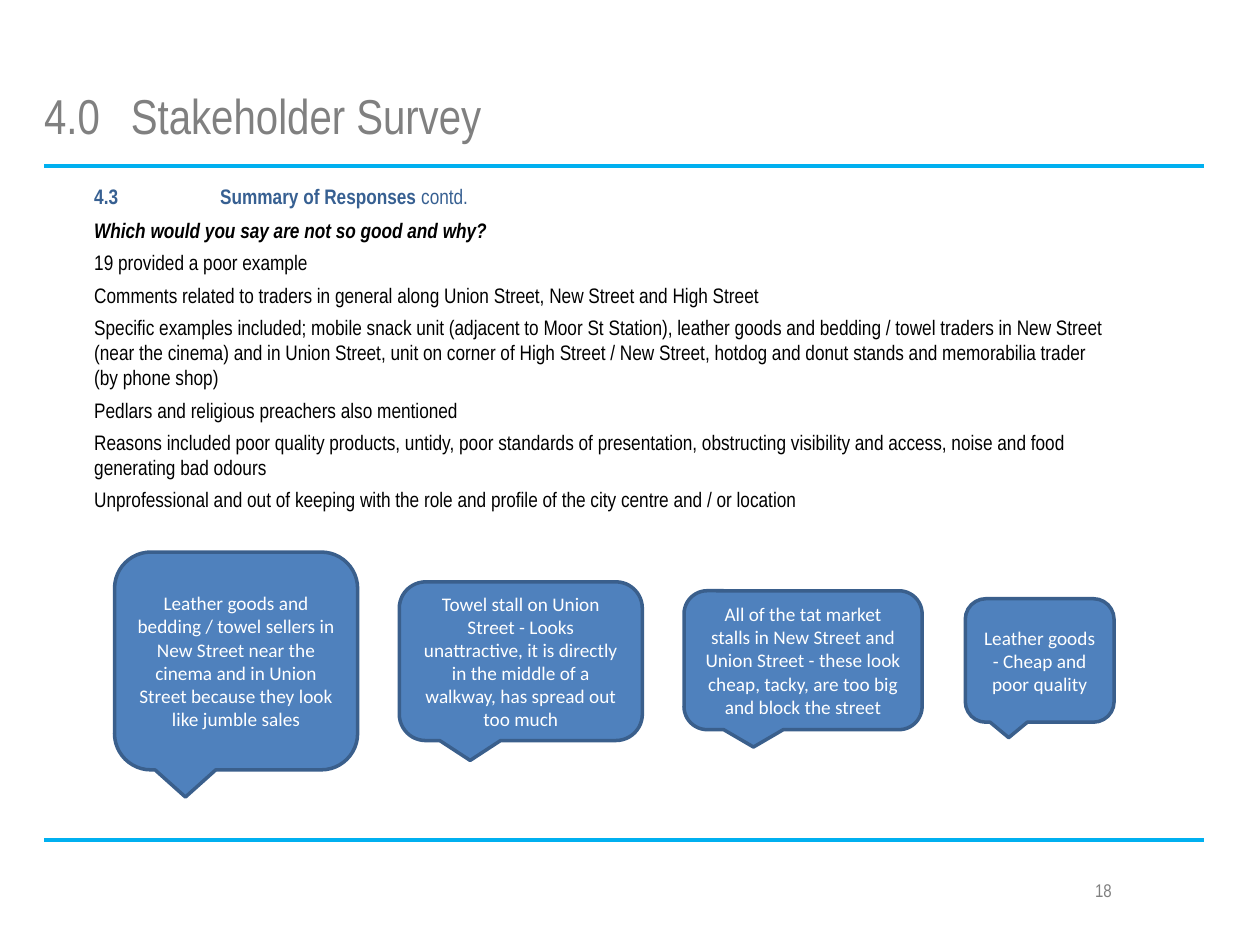
from lxml.etree import SubElement
from pptx import Presentation
from pptx.dml.color import RGBColor
from pptx.enum.shapes import MSO_CONNECTOR, MSO_SHAPE
from pptx.enum.text import MSO_ANCHOR, PP_ALIGN
from pptx.oxml.ns import qn
from pptx.util import Cm, Pt

GREY = RGBColor(0x80, 0x80, 0x80)
CYAN = RGBColor(0x00, 0xB0, 0xF0)
NAVY = RGBColor(0x37, 0x60, 0x92)
BLACK = RGBColor(0x00, 0x00, 0x00)
WHITE = RGBColor(0xFF, 0xFF, 0xFF)
BLUE = RGBColor(0x4F, 0x81, 0xBD)
OUTLINE = RGBColor(0x3A, 0x5F, 0x8C)
NARROW, BODY = "Arial Narrow", "Calibri"

TITLE = "4.0 \tStakeholder Survey"
HEADING = ("4.3\tSummary of Responses", " contd.")
QUESTION = "Which would you say are not so good and why?"
FINDINGS = [
    "19 provided a poor example",
    "Comments related to traders in general along Union Street, New Street and High Street",
    "Specific examples included; mobile snack unit (adjacent to Moor St Station), leather goods "
    "and bedding / towel traders in New Street (near the cinema) and in Union Street, unit on "
    "corner of High Street / New Street, hotdog and donut stands and memorabilia trader "
    "(by phone shop)",
    "Pedlars and religious preachers also mentioned",
    "Reasons included poor quality products, untidy, poor standards of presentation, "
    "obstructing visibility and access, noise and food generating bad odours",
    "Unprofessional and out of keeping with the role and profile of the city centre "
    "and / or location",
]
PAGE = "18"
# Quote, then left, top, width and height in cm
CALLOUTS = [
    ("Leather goods and bedding / towel sellers in New Street near the cinema and in Union "
     "Street because they look like jumble sales", 2.31, 11.13, 4.9, 4.39),
    ("Towel stall on Union Street - Looks unattractive, it is directly in the middle of a "
     "walkway, has spread out too much", 8.05, 11.73, 4.9, 3.2),
    ("All of the tat market stalls in New Street and Union Street - these look cheap, tacky, "
     "are too big and block the street", 13.79, 11.91, 4.8, 2.8),
    ("Leather goods - Cheap and poor quality", 19.46, 12.07, 3.0, 2.49),
]
RULES = [3.35, 16.94]
RULE_LEFT, RULE_RIGHT = 0.89, 24.28


def add_text_frame(s, left, top, width, height, inset=0.0):
    tf = s.shapes.add_textbox(Cm(left), Cm(top), Cm(width), Cm(height)).text_frame
    tf.word_wrap = True
    tf.margin_left = tf.margin_right = Cm(inset)
    tf.margin_top = tf.margin_bottom = Cm(inset / 2)
    return tf


def set_tab(p, position):
    tabs = SubElement(p._p.get_or_add_pPr(), qn("a:tabLst"))
    SubElement(tabs, qn("a:tab"), pos=str(Cm(position)), algn="l")


def set_font(p, name, size, color):
    p.font.name, p.font.size = name, Pt(size)
    p.font.color.rgb = color


def add_rule(s, y):
    line = s.shapes.add_connector(MSO_CONNECTOR.STRAIGHT, Cm(RULE_LEFT), Cm(y),
                                  Cm(RULE_RIGHT), Cm(y))
    line.line.color.rgb = CYAN
    line.line.width = Pt(2.25)
    SubElement(line._element.spPr, qn("a:effectLst"))


def add_callout(s, quote, *box):
    sp = s.shapes.add_shape(MSO_SHAPE.ROUNDED_RECTANGULAR_CALLOUT, *map(Cm, box))
    sp.shadow.inherit = False
    sp.fill.solid()
    sp.fill.fore_color.rgb = BLUE
    sp.line.color.rgb = OUTLINE
    sp.line.width = Pt(2)
    tf = sp.text_frame
    tf.word_wrap = True
    tf.vertical_anchor = MSO_ANCHOR.MIDDLE
    p = tf.paragraphs[0]
    p.text = quote
    p.alignment = PP_ALIGN.CENTER
    set_font(p, BODY, 11, WHITE)


def main():
    prs = Presentation()
    prs.slide_width, prs.slide_height = Cm(25.4), Cm(19.05)
    s = prs.slides.add_slide(prs.slide_layouts[6])

    for y in RULES:
        add_rule(s, y)

    tf = add_text_frame(s, 0.89, 0.43, 22.86, 2.49)
    tf.vertical_anchor = MSO_ANCHOR.BOTTOM
    p = tf.paragraphs[0]
    p.text = TITLE
    set_tab(p, 1.75)
    set_font(p, NARROW, 28, GREY)

    p = add_text_frame(s, 1.9, 3.71, 8.0, 0.81).paragraphs[0]
    set_tab(p, 2.54)
    set_font(p, NARROW, 12, NAVY)
    for text, bold in zip(HEADING, (True, False)):
        r = p.add_run()
        r.text = text
        r.font.bold = bold

    tf = add_text_frame(s, 1.9, 4.39, 20.55, 6.53)
    for i, text in enumerate([QUESTION] + FINDINGS):
        p = tf.add_paragraph() if i else tf.paragraphs[0]
        p.text = text
        p.space_before = Pt(2 if i else 0)
        p.space_after = Pt(2)
        set_font(p, NARROW, 12, BLACK)
        p.font.bold = p.font.italic = i == 0

    for callout in CALLOUTS:
        add_callout(s, *callout)

    p = add_text_frame(s, 18.21, 17.6, 4.45, 1.27, inset=0.25).paragraphs[0]
    p.text = PAGE
    p.alignment = PP_ALIGN.RIGHT
    set_font(p, NARROW, 10.5, GREY)

    prs.save("out.pptx")


if __name__ == "__main__":
    main()
